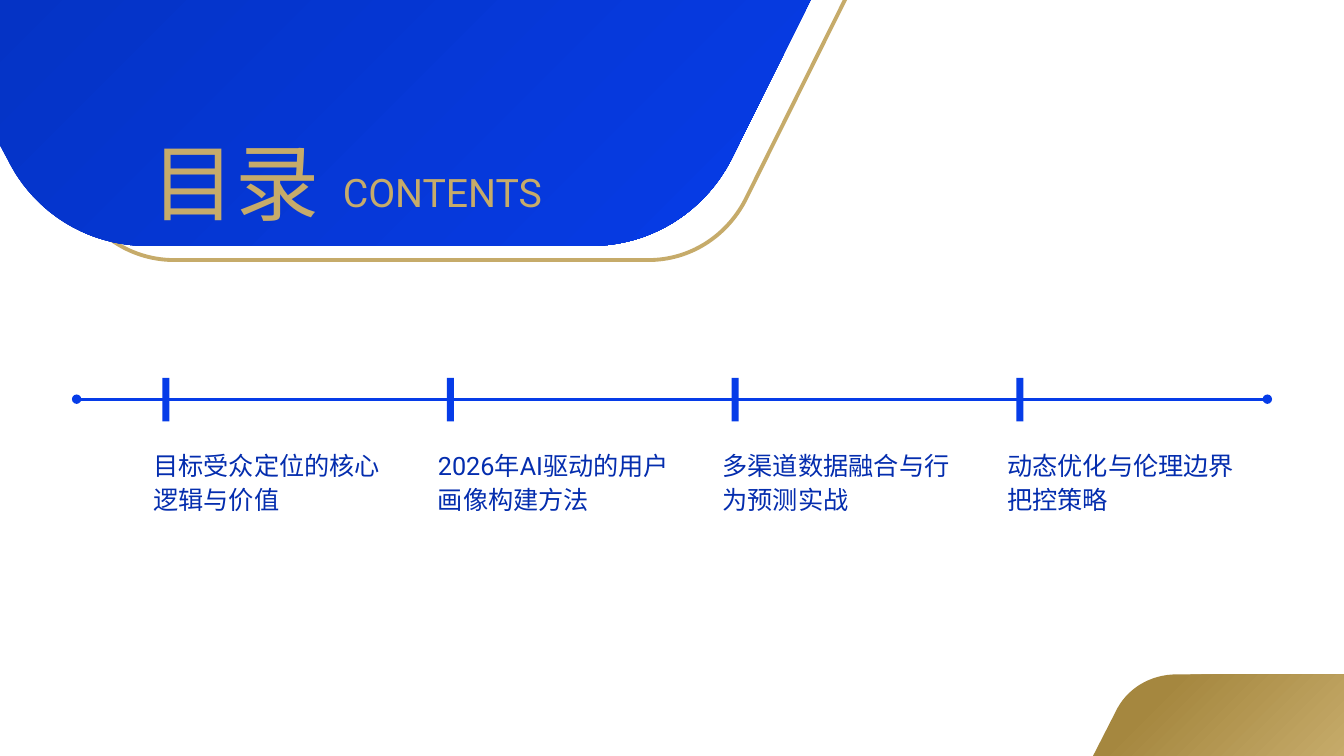
from dataclasses import dataclass

from pptx import Presentation
from pptx.dml.color import RGBColor
from pptx.enum.shapes import MSO_CONNECTOR, MSO_SHAPE
from pptx.enum.text import MSO_ANCHOR, MSO_AUTO_SIZE, PP_ALIGN
from pptx.oxml import parse_xml
from pptx.oxml.ns import nsdecls, qn
from pptx.util import Inches, Pt


@dataclass(frozen=True)
class Theme:
    font: str = "Roboto"
    white: RGBColor = RGBColor.from_string("FFFFFF")
    blue: RGBColor = RGBColor.from_string("063CE8")
    deep_blue: RGBColor = RGBColor.from_string("0533C5")
    text_blue: RGBColor = RGBColor.from_string("042DAE")
    gold: RGBColor = RGBColor.from_string("C6AB6A")
    dark_gold: RGBColor = RGBColor.from_string("A5873F")
    title_size: Pt = Pt(60)
    caption_size: Pt = Pt(28)
    topic_size: Pt = Pt(18)
    outline_width: Pt = Pt(2.75)
    axis_width: Pt = Pt(2.25)


THEME = Theme()
SLIDE_WIDTH, SLIDE_HEIGHT = 13.33, 7.5
TOPICS = [
    "目标受众定位的核心逻辑与价值",
    "2026年AI驱动的用户画像构建方法",
    "多渠道数据融合与行为预测实战",
    "动态优化与伦理边界把控策略",
]
FIRST_TICK_LEFT, LAST_TICK_LEFT = 1.61, 10.08
TOPIC_PITCH = (LAST_TICK_LEFT - FIRST_TICK_LEFT) / (len(TOPICS) - 1)
TOPIC_INDENT = 0.09

OUTLINE_PANEL = [
    (0, -0.04), (8.4, -0.04), (7.39, 1.99),
    ((7.2, 2.35), (6.84, 2.58), (6.43, 2.58)),
    (1.73, 2.58),
    ((1.32, 2.58), (0.95, 2.35), (0.77, 1.99)),
    (0, 0.44),
]
BLUE_PANEL = [
    (0, 0), (8.04, 0), (7.25, 1.59),
    ((6.98, 2.11), (6.45, 2.44), (5.86, 2.44)),
    (1.46, 2.44),
    ((0.87, 2.44), (0.34, 2.11), (0.08, 1.59)),
    (0, 1.44),
]
GOLD_CORNER = [
    (11.67, 6.69), (13.33, 6.69), (13.33, 7.5), (10.84, 7.5), (11.06, 7.07),
    ((11.17, 6.83), (11.41, 6.69), (11.67, 6.69)),
]


def set_attributes(target, values):
    for name, value in values.items():
        setattr(target, name, value)


def is_curve(part):
    return isinstance(part[0], tuple)


def bend_curves(panel, outline):
    segments = iter(list(panel._element.iter(qn("a:lnTo"))))
    for part in outline[1:]:
        segment = next(segments)
        if is_curve(part):
            curve = parse_xml(f'<a:cubicBezTo {nsdecls("a")}/>')
            segment.addprevious(curve)
            for piece in (segment, next(segments), next(segments)):
                curve.append(piece[0])
                piece.getparent().remove(piece)


def add_panel(slide, outline):
    points = []
    for part in outline:
        points.extend(part if is_curve(part) else [part])
    start, *rest = [(Inches(x), Inches(y)) for x, y in points]
    builder = slide.shapes.build_freeform(*start)
    builder.add_line_segments(rest, close=True)
    panel = builder.convert_to_shape()
    bend_curves(panel, outline)
    panel.shadow.inherit = False
    panel.fill.background()
    panel.line.fill.background()
    return panel


def fill_from_corner(shape, inner, outer, outer_position=1.0):
    shape.fill.gradient()
    stops = shape.fill.gradient_stops
    for stop, color, position in zip(stops, (inner, outer), (0, outer_position)):
        stop.color.rgb = color
        stop.position = position
    gradient = shape._element.spPr.find(qn("a:gradFill"))
    gradient.remove(gradient.find(qn("a:lin")))
    gradient.append(parse_xml(
        f'<a:path {nsdecls("a")} path="circle"><a:fillToRect l="100000" t="100000"/></a:path>'))
    gradient.append(parse_xml(f'<a:tileRect {nsdecls("a")} r="-100000" b="-100000"/>'))


def add_axis(slide, left, right, y):
    axis = slide.shapes.add_connector(
        MSO_CONNECTOR.STRAIGHT, Inches(left), Inches(y), Inches(right), Inches(y))
    axis.line.color.rgb = THEME.blue
    axis.line.width = THEME.axis_width
    line = axis.line._get_or_add_ln()
    for end in ("headEnd", "tailEnd"):
        line.append(parse_xml(f'<a:{end} {nsdecls("a")} type="oval"/>'))
    axis._element.spPr.append(parse_xml(f'<a:effectLst {nsdecls("a")}/>'))


def add_rectangle(slide, left, top, width, height, color):
    rectangle = slide.shapes.add_shape(
        MSO_SHAPE.RECTANGLE, Inches(left), Inches(top), Inches(width), Inches(height))
    rectangle.shadow.inherit = False
    rectangle.fill.solid()
    rectangle.fill.fore_color.rgb = color
    rectangle.line.fill.background()


def write_text(shape, text, size, color):
    frame = shape.text_frame
    frame.text = text
    set_attributes(frame, {
        "word_wrap": True, "auto_size": MSO_AUTO_SIZE.NONE, "vertical_anchor": MSO_ANCHOR.TOP,
        "margin_left": 0, "margin_top": 0, "margin_right": 0, "margin_bottom": 0,
    })
    paragraph = frame.paragraphs[0]
    set_attributes(paragraph, {"alignment": PP_ALIGN.LEFT, "line_spacing": 1.1})
    font = paragraph.runs[0].font
    set_attributes(font, {"name": THEME.font, "size": size})
    font.color.rgb = color
    font._element.find(qn("a:latin")).addnext(
        parse_xml(f'<a:ea {nsdecls("a")} typeface="{THEME.font}"/>'))


def add_text(slide, left, top, width, height, text, size, color):
    box = slide.shapes.add_textbox(Inches(left), Inches(top), Inches(width), Inches(height))
    write_text(box, text, size, color)


def place_title(slide, left, top, width, height, text):
    title = slide.shapes.title
    set_attributes(title, {
        "left": Inches(left), "top": Inches(top),
        "width": Inches(width), "height": Inches(height),
    })
    write_text(title, text, THEME.title_size, THEME.gold)
    slide.shapes._spTree.append(title._element)


def main():
    presentation = Presentation()
    presentation.slide_width = Inches(SLIDE_WIDTH)
    presentation.slide_height = Inches(SLIDE_HEIGHT)
    slide = presentation.slides.add_slide(presentation.slide_layouts[5])

    add_rectangle(slide, 0, 0, SLIDE_WIDTH, SLIDE_HEIGHT, THEME.white)
    outline = add_panel(slide, OUTLINE_PANEL)
    outline.line.color.rgb = THEME.gold
    outline.line.width = THEME.outline_width
    fill_from_corner(add_panel(slide, BLUE_PANEL), THEME.blue, THEME.deep_blue)
    fill_from_corner(add_panel(slide, GOLD_CORNER), THEME.gold, THEME.dark_gold, 0.74)

    add_axis(slide, 0.76, 12.57, 3.96)
    tick_lefts = [FIRST_TICK_LEFT + index * TOPIC_PITCH for index in range(len(TOPICS))]
    for left in tick_lefts:
        add_rectangle(slide, left, 3.75, 0.07, 0.43, THEME.blue)

    place_title(slide, 1.5, 1.19, 2.16, 1.01, "目录")
    add_text(slide, 3.4, 1.62, 5.74, 0.47, "CONTENTS", THEME.caption_size, THEME.gold)
    for left, topic in zip(tick_lefts, TOPICS):
        add_text(slide, left - TOPIC_INDENT, 4.44, 2.35, 1.87,
                 topic, THEME.topic_size, THEME.text_blue)

    presentation.save("out.pptx")


if __name__ == "__main__":
    main()
